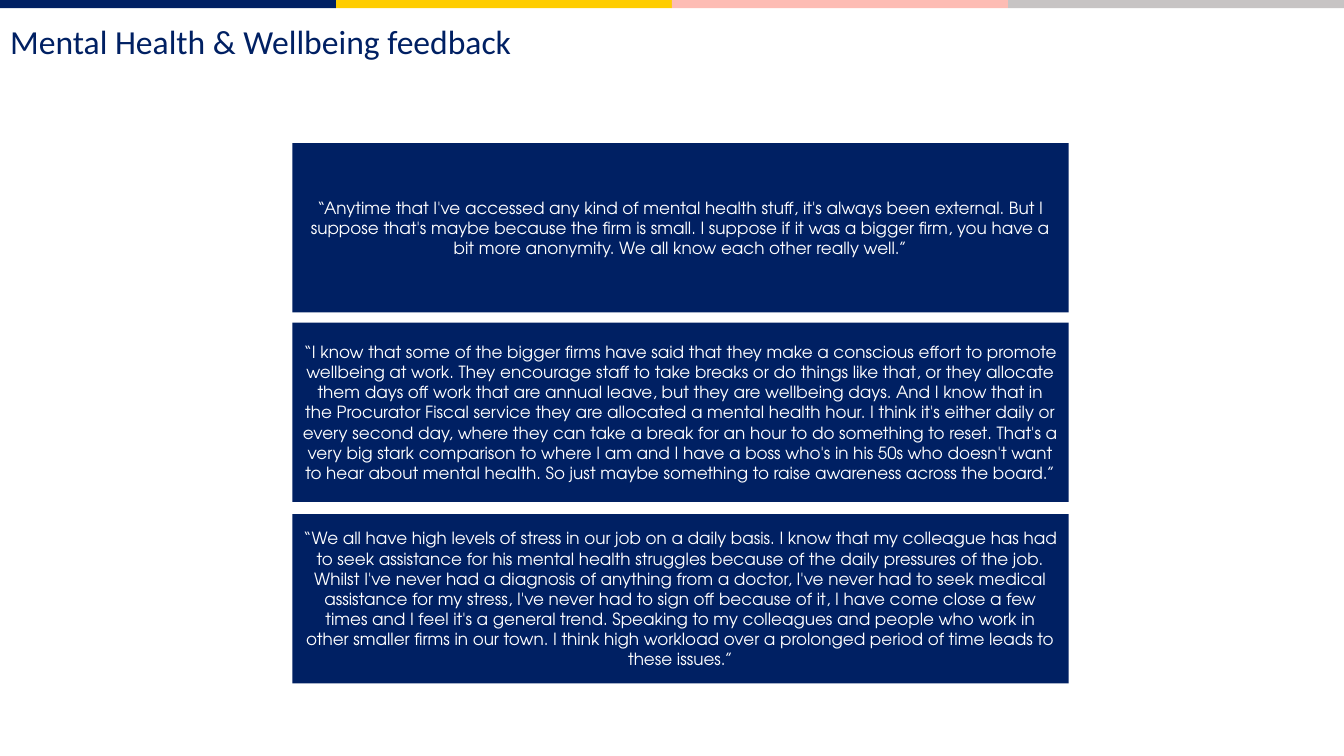
from pptx import Presentation
from pptx.dml.color import RGBColor
from pptx.enum.shapes import MSO_SHAPE
from pptx.enum.text import MSO_ANCHOR, PP_ALIGN
from pptx.util import Inches, Pt

RECT = MSO_SHAPE.RECTANGLE
MIDDLE = MSO_ANCHOR.MIDDLE
CENTER, LEFT = PP_ALIGN.CENTER, PP_ALIGN.LEFT
WIDTH, HEIGHT = 13.33, 7.5
NAVY, WHITE = "002063", "FFFFFF"
BANDS = [NAVY, "FFCD00", "FDBCB4", "C7C4C4"]

# Top, height and wording of each quote
QUOTES = [
    (1.42, 1.68,
     "“Anytime that I've accessed any kind of mental health stuff, it's always "
     "been external. But I suppose that's maybe because the firm is small. I "
     "suppose if it was a bigger firm, you have a bit more anonymity. We all "
     "know each other really well.”"),
    (3.2, 1.78,
     "“I know that some of the bigger firms have said that they make a conscious "
     "effort to promote wellbeing at work. They encourage staff to take breaks "
     "or do things like that, or they allocate them days off work that are "
     "annual leave, but they are wellbeing days. And I know that in the "
     "Procurator Fiscal service they are allocated a mental health hour. I think "
     "it's either daily or every second day, where they can take a break for an "
     "hour to do something to reset. That's a very big stark comparison to where "
     "I am and I have a boss who's in his 50s who doesn't want to hear about "
     "mental health. So just maybe something to raise awareness across the "
     "board.”"),
    (5.1, 1.68,
     "“We all have high levels of stress in our job on a daily basis. I know that "
     "my colleague has had to seek assistance for his mental health struggles "
     "because of the daily pressures of the job. Whilst I've never had a "
     "diagnosis of anything from a doctor, I've never had to seek medical "
     "assistance for my stress, I've never had to sign off because of it, I have "
     "come close a few times and I feel it's a general trend. Speaking to my "
     "colleagues and people who work in other smaller firms in our town. I think "
     "high workload over a prolonged period of time leads to these issues.”"),
]


def color(code):
    return RGBColor.from_string(code)


def add_rect(slide, left, top, width, height, fill):
    rect = slide.shapes.add_shape(
        RECT, Inches(left), Inches(top), Inches(width), Inches(height))
    rect.shadow.inherit = False
    rect.fill.solid()
    rect.fill.fore_color.rgb = color(fill)
    rect.line.fill.background()
    return rect


def set_text(frame, text, font, size, tint, align):
    frame.word_wrap = True
    frame.vertical_anchor = MIDDLE
    frame.text = text
    para = frame.paragraphs[0]
    para.alignment = align
    para.font.name = font
    para.font.size = Pt(size)
    para.font.color.rgb = color(tint)


def add_title(slide, left, top, width, height):
    title = slide.shapes.title
    title.left, title.top = Inches(left), Inches(top)
    title.width, title.height = Inches(width), Inches(height)
    set_text(title.text_frame, "Mental Health & Wellbeing feedback",
             "Calibri", 24, NAVY, LEFT)


def add_bands(slide, left, top, width, height):
    step = width / len(BANDS)
    for i, fill in enumerate(BANDS):
        add_rect(slide, left + i * step, top, step, height, fill)


def add_quotes(slide, left, width):
    for top, height, text in QUOTES:
        box = add_rect(slide, left, top, width, height, NAVY)
        set_text(box.text_frame, text, "TeX Gyre Adventor", 12, WHITE, CENTER)


def main():
    deck = Presentation()
    deck.slide_width, deck.slide_height = Inches(WIDTH), Inches(HEIGHT)
    slide = deck.slides.add_slide(deck.slide_layouts[5])
    add_quotes(slide, 2.9, 7.7)
    add_bands(slide, 0, 0, WIDTH, 0.08)
    add_title(slide, 0, 0.16, 13.23, 0.5)
    deck.save("out.pptx")


if __name__ == "__main__":
    main()
